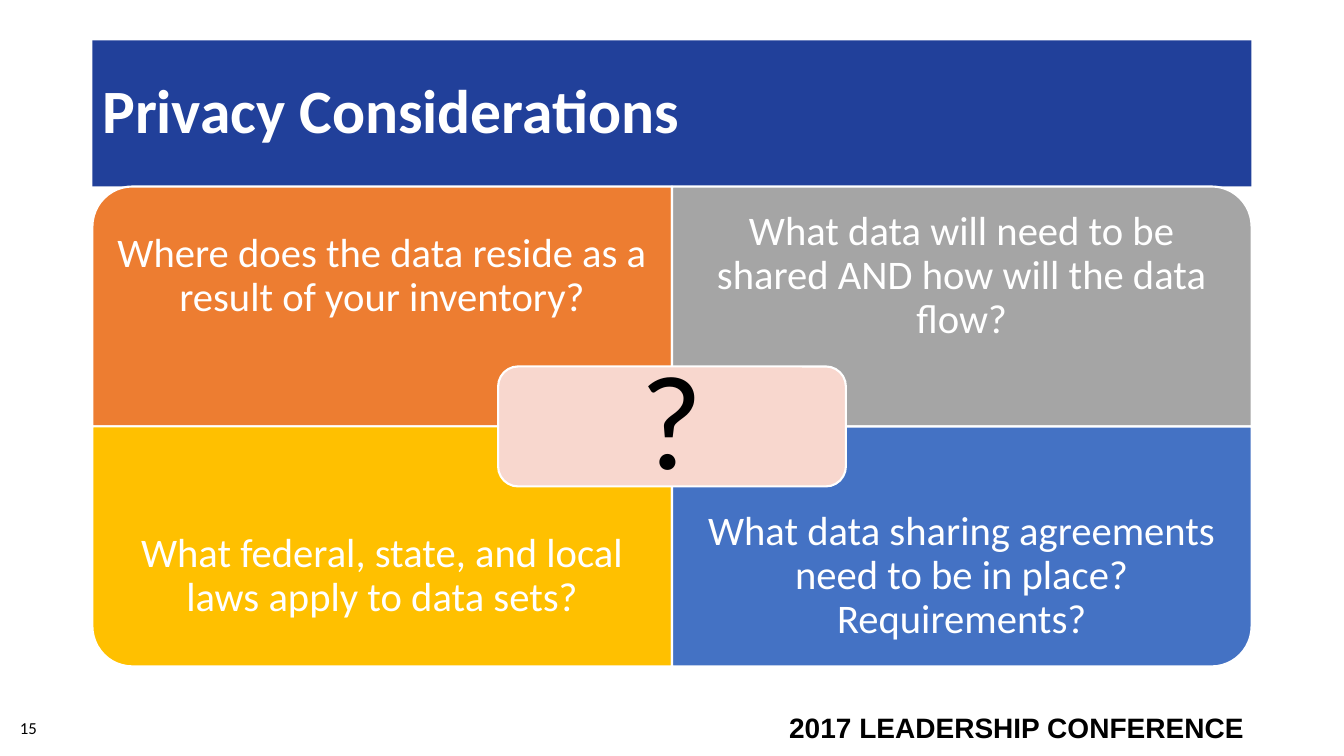
from dataclasses import dataclass

from pptx import Presentation
from pptx.dml.color import RGBColor
from pptx.enum.shapes import MSO_SHAPE
from pptx.enum.text import MSO_ANCHOR, PP_ALIGN
from pptx.shapes.autoshape import Shape
from pptx.slide import Slide
from pptx.util import Pt

WHITE = RGBColor(0xFF, 0xFF, 0xFF)
BLACK = RGBColor(0x00, 0x00, 0x00)
NAVY = RGBColor(0x21, 0x40, 0x9A)
ORANGE = RGBColor(0xED, 0x7D, 0x31)
GRAY = RGBColor(0xA5, 0xA5, 0xA5)
GOLD = RGBColor(0xFF, 0xC0, 0x00)
BLUE = RGBColor(0x44, 0x72, 0xC4)
PINK = RGBColor(0xF8, 0xD7, 0xCE)

# Matrix geometry in points
LEFT, TOP = 66, 133.2
TILE_WIDTH, TILE_HEIGHT = 414, 171.4
QUESTION_HEIGHT = 128.5
HUB_WIDTH, HUB_HEIGHT = 248.4, 85.7
HUB_MARGIN = 4.2


@dataclass(frozen=True)
class Frame:
    left: float
    top: float
    width: float
    height: float

    def lengths(self) -> tuple[Pt, Pt, Pt, Pt]:
        return Pt(self.left), Pt(self.top), Pt(self.width), Pt(self.height)


@dataclass(frozen=True)
class TextStyle:
    size: float
    color: RGBColor
    font: str = "Calibri"
    bold: bool = False
    align: PP_ALIGN = PP_ALIGN.LEFT
    anchor: MSO_ANCHOR = MSO_ANCHOR.MIDDLE
    spacing: float = 1.0
    inset: float | None = None


@dataclass(frozen=True)
class Quadrant:
    column: int
    row: int
    rotation: int
    fill: RGBColor
    question: str


TITLE = TextStyle(44, WHITE, bold=True, spacing=0.9)
QUESTION = TextStyle(29, WHITE, align=PP_ALIGN.CENTER, spacing=0.9, inset=16.5)
HUB = TextStyle(96, BLACK, align=PP_ALIGN.CENTER, spacing=0.9, inset=28.8)
NUMBER = TextStyle(12, BLACK)
FOOTER = TextStyle(20, BLACK, font="Arial", bold=True,
                   align=PP_ALIGN.RIGHT, anchor=MSO_ANCHOR.TOP)

QUADRANTS = [
    Quadrant(0, 0, 270, ORANGE,
             "Where does the data reside as a result of your inventory?"),
    Quadrant(1, 0, 0, GRAY,
             "What data will need to be shared AND how will the data flow?"),
    Quadrant(0, 1, 180, GOLD,
             "What federal, state, and local laws apply to data sets?"),
    Quadrant(1, 1, 90, BLUE,
             "What data sharing agreements need to be in place? Requirements?"),
]


def write(box: Shape, text: str, style: TextStyle) -> None:
    frame = box.text_frame
    frame.word_wrap = True
    frame.vertical_anchor = style.anchor
    if style.inset is not None:
        frame.margin_left = frame.margin_right = Pt(style.inset)
        frame.margin_top = frame.margin_bottom = Pt(style.inset)
    para = frame.paragraphs[0]
    para.text = text
    para.alignment = style.align
    para.line_spacing = style.spacing
    para.font.name = style.font
    para.font.size = Pt(style.size)
    para.font.bold = style.bold
    para.font.color.rgb = style.color


def add_text(page: Slide, frame: Frame, text: str, style: TextStyle) -> None:
    write(page.shapes.add_textbox(*frame.lengths()), text, style)


def add_block(page: Slide, kind: MSO_SHAPE, frame: Frame, fill: RGBColor,
              outlined: bool = True) -> Shape:
    block = page.shapes.add_shape(kind, *frame.lengths())
    block.shadow.inherit = False
    block.fill.solid()
    block.fill.fore_color.rgb = fill
    if outlined:
        block.line.color.rgb = WHITE
        block.line.width = Pt(1.5)
    else:
        block.line.fill.background()
    return block


def add_quadrant(page: Slide, quadrant: Quadrant) -> None:
    left = LEFT + quadrant.column * TILE_WIDTH
    top = TOP + quadrant.row * TILE_HEIGHT
    # A quarter turn swaps the sides around the same centre
    width, height = TILE_WIDTH, TILE_HEIGHT
    if quadrant.rotation % 180:
        width, height = height, width
    tile = Frame(left + (TILE_WIDTH - width) / 2,
                 top + (TILE_HEIGHT - height) / 2, width, height)
    block = add_block(page, MSO_SHAPE.ROUND_1_RECTANGLE, tile, quadrant.fill)
    block.rotation = quadrant.rotation
    # Questions keep to the outer edge, clear of the hub
    text_top = top + quadrant.row * (TILE_HEIGHT - QUESTION_HEIGHT)
    add_text(page, Frame(left, text_top, TILE_WIDTH, QUESTION_HEIGHT),
             quadrant.question, QUESTION)


def add_hub(page: Slide) -> None:
    hub = Frame(LEFT + TILE_WIDTH - HUB_WIDTH / 2,
                TOP + TILE_HEIGHT - HUB_HEIGHT / 2, HUB_WIDTH, HUB_HEIGHT)
    add_block(page, MSO_SHAPE.ROUNDED_RECTANGLE, hub, PINK)
    inner = Frame(hub.left + HUB_MARGIN, hub.top + HUB_MARGIN,
                  HUB_WIDTH - 2 * HUB_MARGIN, HUB_HEIGHT - 2 * HUB_MARGIN)
    add_text(page, inner, "?", HUB)


def main() -> None:
    deck = Presentation()
    deck.slide_width, deck.slide_height = Pt(960), Pt(540)
    page = deck.slides.add_slide(deck.slide_layouts[6])

    # Footer and page number
    add_text(page, Frame(541.4, 504, 354.2, 30.2),
             "2017 LEADERSHIP CONFERENCE", FOOTER)
    add_text(page, Frame(7.2, 505.4, 216, 28.8), "15", NUMBER)

    # Title band
    band = add_block(page, MSO_SHAPE.RECTANGLE,
                     Frame(LEFT, 28.8, 2 * TILE_WIDTH, 104.4), NAVY, False)
    write(band, "Privacy Considerations", TITLE)

    # Question matrix
    for quadrant in QUADRANTS:
        add_quadrant(page, quadrant)
    add_hub(page)

    deck.save("out.pptx")


if __name__ == "__main__":
    main()
